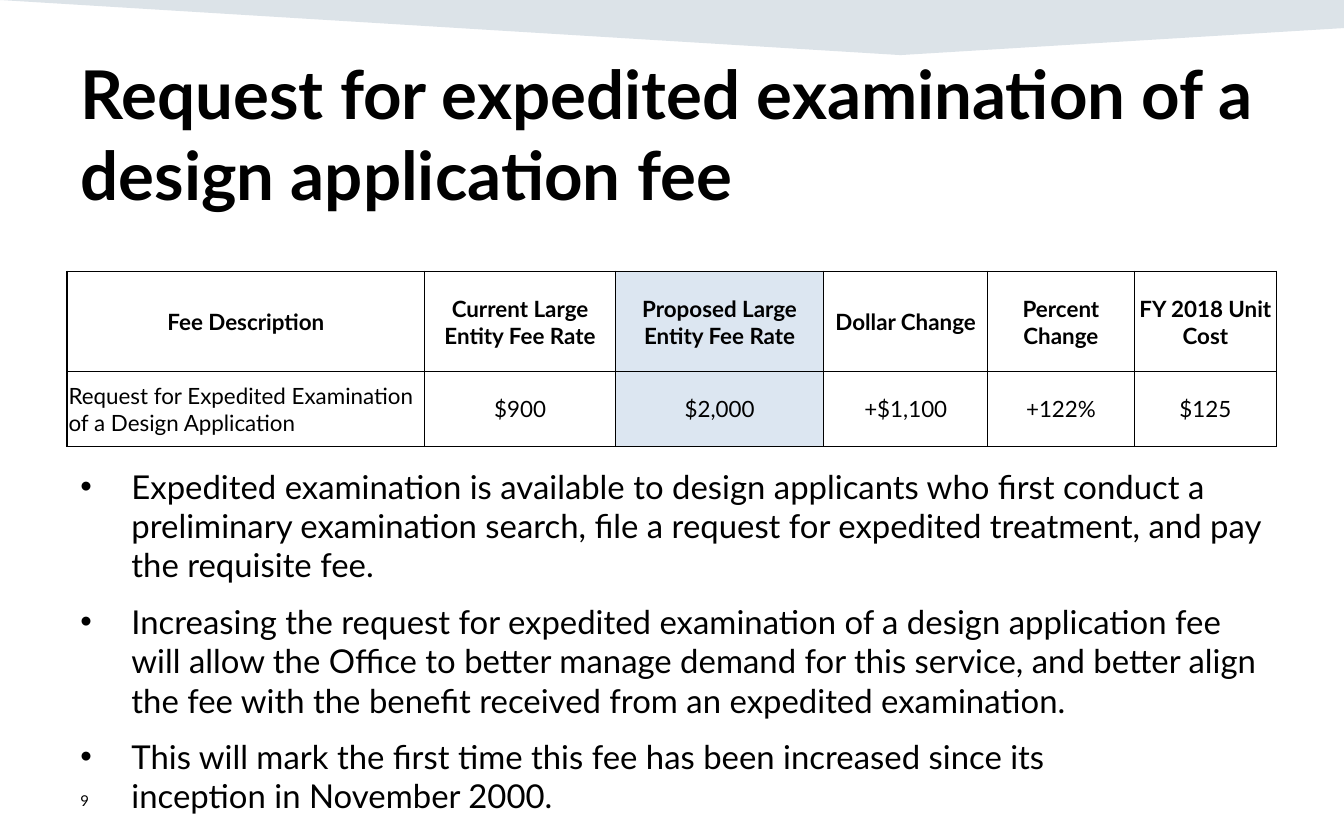
import lxml.etree
import pptx
import pptx.dml.color
import pptx.enum.text
import pptx.oxml.ns
import pptx.util
from pptx.util import Inches

BLACK = pptx.dml.color.RGBColor(0x00, 0x00, 0x00)
NAVY = pptx.dml.color.RGBColor(0x16, 0x44, 0x69)
PALE_BLUE = pptx.dml.color.RGBColor(0xDC, 0xE6, 0xF1)
FONT_NAME = "Lato"
ALIGN = pptx.enum.text.PP_ALIGN
ANCHOR = pptx.enum.text.MSO_ANCHOR

TITLE = "Request for expedited examination of a design application fee"
FEE_ROWS = [
    ["Fee Description", "Current Large Entity Fee Rate", "Proposed Large Entity Fee Rate",
     "Dollar Change", "Percent Change", "FY 2018 Unit Cost"],
    ["Request for Expedited Examination of a Design Application", "$900", "$2,000",
     "+$1,100", "+122%", "$125"],
]
COLUMN_WIDTHS = [2.66, 1.42, 1.55, 1.22, 1.09, 1.06]
ROW_HEIGHTS = [0.74, 0.56]
PROPOSED_COLUMN = 2
BULLETS = [
    "Expedited examination is available to design applicants who first conduct a preliminary "
    "examination search, file a request for expedited treatment, and pay the requisite fee.",
    "Increasing the request for expedited examination of a design application fee will allow "
    "the Office to better manage demand for this service, and better align the fee with the "
    "benefit received from an expedited examination.",
    "This will mark the first time this fee has been increased since its\v"
    "inception in November 2000.",
]


def set_attributes(target, values):
    """Set every attribute of the target from a dict."""
    for name, value in values.items():
        setattr(target, name, value)


def format_font(paragraph, size, bold=False):
    """Give a paragraph the slide's font at the given size."""
    set_attributes(paragraph.font, {"name": FONT_NAME, "size": pptx.util.Pt(size), "bold": bold})
    paragraph.font.color.rgb = BLACK


def add_child(parent, tag, **attributes):
    """Append a DrawingML element and return it."""
    return lxml.etree.SubElement(parent, pptx.oxml.ns.qn(tag), attributes)


def add_banner(slide, left, top, width, height):
    """Draw the translucent angled band along the top edge."""
    builder = slide.shapes.build_freeform(left, top)
    corners = [(1, 0), (1, 0.51), (0.67, 1)]
    builder.add_line_segments(
        [(left + int(width * x), top + int(height * y)) for x, y in corners], close=True)
    banner = builder.convert_to_shape()
    banner.shadow.inherit = False
    banner.fill.solid()
    banner.fill.fore_color.rgb = NAVY
    banner.line.fill.background()
    color = banner.fill._xPr.find(".//" + pptx.oxml.ns.qn("a:srgbClr"))
    add_child(color, "a:alpha", val="15000")


def place_title(slide, left, top, width, height):
    """Move and format the title placeholder."""
    title = slide.shapes.title
    set_attributes(title, {"left": left, "top": top, "width": width, "height": height})
    set_attributes(title.text_frame, {
        "text": TITLE, "word_wrap": True, "vertical_anchor": ANCHOR.TOP,
        "auto_size": pptx.enum.text.MSO_AUTO_SIZE.NONE})
    paragraph = title.text_frame.paragraphs[0]
    paragraph.alignment = ALIGN.LEFT
    format_font(paragraph, 36, bold=True)


def add_borders(cell, widths):
    """Draw the left, right, top and bottom borders of a cell in points."""
    properties = cell._tc.get_or_add_tcPr()
    for side, width in zip("LRTB", widths):
        line = add_child(properties, "a:ln" + side, w=str(pptx.util.Pt(width)))
        add_child(add_child(line, "a:solidFill"), "a:srgbClr", val=str(BLACK))


def add_fee_table(slide, left, top, width, height):
    """Add the fee comparison with its proposed rate highlighted."""
    last = len(COLUMN_WIDTHS) - 1
    table = slide.shapes.add_table(
        len(FEE_ROWS), len(COLUMN_WIDTHS), left, top, width, height).table
    set_attributes(table, {"first_row": False, "horz_banding": False})
    for column, share in zip(table.columns, COLUMN_WIDTHS):
        column.width = int(width * share / sum(COLUMN_WIDTHS))
    for row, share in zip(table.rows, ROW_HEIGHTS):
        row.height = int(height * share / sum(ROW_HEIGHTS))
    for row_index, texts in enumerate(FEE_ROWS):
        for column_index, text in enumerate(texts):
            cell = table.cell(row_index, column_index)
            set_attributes(cell, {
                "text": text, "vertical_anchor": ANCHOR.MIDDLE,
                "margin_left": Inches(0.01), "margin_right": Inches(0.01),
                "margin_top": Inches(0.01), "margin_bottom": 0})
            is_header = row_index == 0
            paragraph = cell.text_frame.paragraphs[0]
            is_description = column_index == 0 and not is_header
            paragraph.alignment = ALIGN.LEFT if is_description else ALIGN.CENTER
            format_font(paragraph, 12, bold=is_header)
            outer_edges = [column_index == 0, column_index == last, is_header, False]
            add_borders(cell, [1 if outer else 0.5 for outer in outer_edges])
            if column_index == PROPOSED_COLUMN:
                cell.fill.solid()
                cell.fill.fore_color.rgb = PALE_BLUE
            else:
                cell.fill.background()


def add_bullets(slide, left, top, width, height):
    """Add the bulleted explanation of the fee change."""
    frame = slide.shapes.add_textbox(left, top, width, height).text_frame
    frame.word_wrap = True
    indent = Inches(0.38)
    for index, text in enumerate(BULLETS):
        paragraph = frame.add_paragraph() if index else frame.paragraphs[0]
        paragraph.text = text
        properties = paragraph._p.get_or_add_pPr()
        properties.set("marL", str(indent))
        properties.set("indent", str(-indent))
        add_child(properties, "a:buFont", typeface="Arial")
        add_child(properties, "a:buChar", char="•")
        paragraph.space_before = pptx.util.Pt(9 if index else 0)
        format_font(paragraph, 17.6)


def add_page_number(slide, left, top, width, height):
    """Add the page number at the lower left."""
    frame = slide.shapes.add_textbox(left, top, width, height).text_frame
    set_attributes(frame, {"text": "9", "word_wrap": True, "vertical_anchor": ANCHOR.MIDDLE})
    format_font(frame.paragraphs[0], 8)


def main():
    """Build and save the presentation."""
    presentation = pptx.Presentation()
    set_attributes(presentation, {"slide_width": Inches(10), "slide_height": Inches(6.25)})
    slide = presentation.slides.add_slide(presentation.slide_layouts.get_by_name("Title Only"))
    left, width = Inches(0.5), Inches(9)
    add_banner(slide, 0, 0, presentation.slide_width, Inches(0.41))
    place_title(slide, left, Inches(0.34), width, Inches(1.04))
    add_bullets(slide, left, Inches(3.42), width, Inches(2.42))
    add_page_number(slide, left, Inches(5.79), Inches(2.25), Inches(0.33))
    add_fee_table(slide, left, Inches(2.02), width, Inches(1.3))
    presentation.save("out.pptx")


if __name__ == "__main__":
    main()
